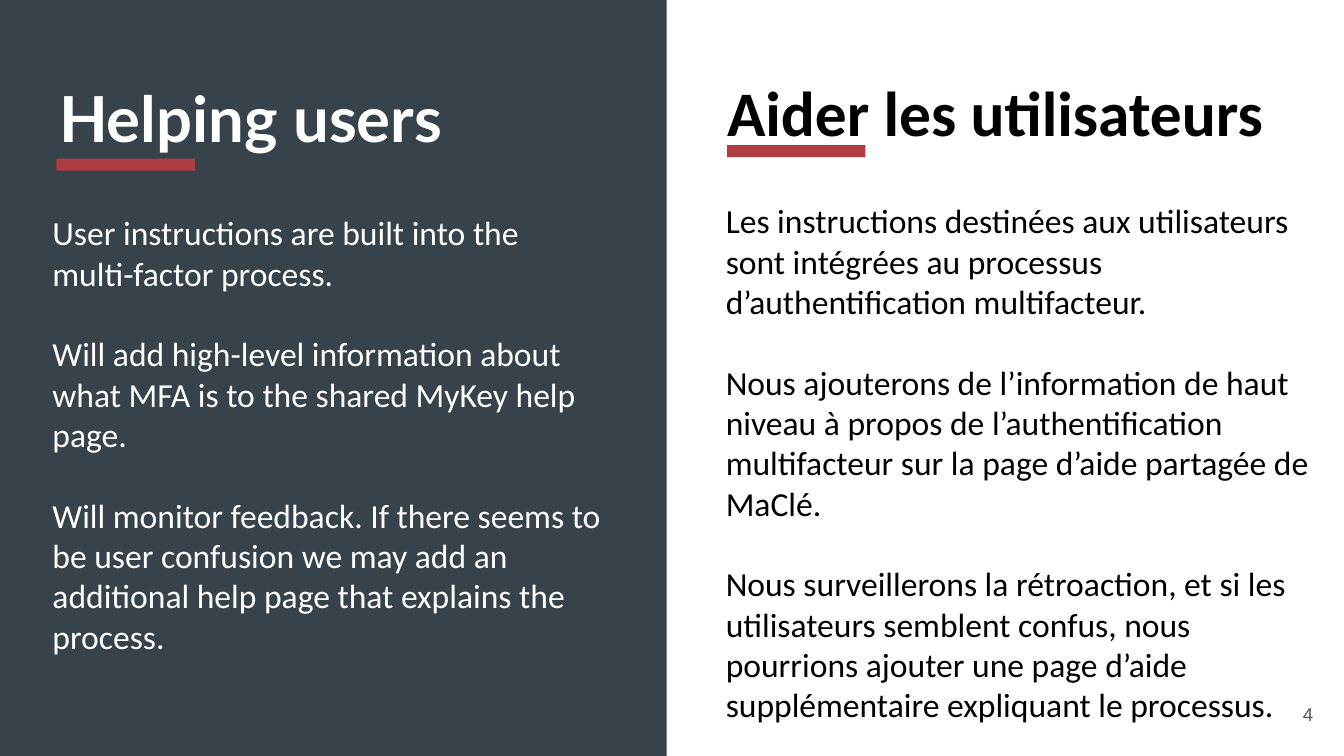
from pptx import Presentation
from pptx import util as u
from pptx.dml import color
from pptx.enum import shapes, text
from pptx.oxml import ns
from lxml import etree


def rgb(value):
    return color.RGBColor.from_string(value)


def place(shape, box):
    shape.left, shape.top, shape.width, shape.height = map(u.Inches, box)


def add_rectangle(slide, box, fill):
    shape = slide.shapes.add_shape(shapes.MSO_SHAPE.RECTANGLE, *map(u.Inches, box))
    shape.shadow.inherit = False
    shape.fill.solid()
    shape.fill.fore_color.rgb = rgb(fill)
    shape.line.fill.background()
    return shape


def remove_bullet(paragraph):
    properties = paragraph._p.get_or_add_pPr()
    properties.set("marL", "0")
    properties.set("indent", "0")
    etree.SubElement(properties, ns.qn("a:buNone"))


def write(shape, groups, size, font, ink, bold=False, gap=0,
          align=text.PP_ALIGN.LEFT, anchor=text.MSO_ANCHOR.TOP):
    frame = shape.text_frame
    frame.word_wrap = True
    frame.auto_size = text.MSO_AUTO_SIZE.NONE
    frame.vertical_anchor = anchor
    frame.margin_left = frame.margin_right = u.Inches(0.1)
    frame.margin_top = frame.margin_bottom = u.Inches(0.1)
    lines = [(line, gap if group_index and not line_index else 0)
             for group_index, group in enumerate(groups)
             for line_index, line in enumerate(group)]
    for index, (line, space) in enumerate(lines):
        paragraph = frame.add_paragraph() if index else frame.paragraphs[0]
        paragraph.text = line
        paragraph.alignment = align
        paragraph.line_spacing = 1.0
        paragraph.space_before = u.Pt(space)
        paragraph.space_after = u.Pt(0)
        remove_bullet(paragraph)
        for run in paragraph.runs:
            run.font.size = u.Pt(size)
            run.font.name = font
            run.font.bold = bold
            run.font.color.rgb = rgb(ink)


def add_language_column(slide, box, title, title_width, heading, heading_font, body, groups,
                        ink, bar_offset, body_offset):
    left, top, width, height = box
    place(title, (left, top, title_width, 1.57))
    write(title, [[heading]], 34, heading_font, ink, bold=True)
    bar_left, bar_top = bar_offset
    add_rectangle(slide, (left + bar_left, top + bar_top, 1.03, 0.09), "AF3C43")
    body_left, body_top = body_offset
    place(body, (left + body_left, top + body_top, width, height - body_top))
    write(body, groups, 18, "Calibri", ink, gap=21.6)


def add_page_number(slide, box, number):
    shape = slide.shapes.add_textbox(*map(u.Inches, box))
    write(shape, [[number]], 10, "Arial", "595959",
          align=text.PP_ALIGN.RIGHT, anchor=text.MSO_ANCHOR.MIDDLE)


def main():
    presentation = Presentation()
    presentation.slide_width = u.Inches(10)
    presentation.slide_height = presentation.slide_width * 9 // 16
    slide = presentation.slides.add_slide(presentation.slide_layouts.get_by_name("Comparison"))
    holders = {holder.placeholder_format.idx: holder for holder in slide.placeholders}

    panel = add_rectangle(slide, (-0.05, -0.01, 5.01, 5.64), "37424A")
    panel.element.getparent().insert(2, panel.element)

    add_language_column(
        slide, (0.34, 0.49, 4.55, 4.52), holders[0], 3.36, "Helping users", "Lato", holders[2],
        [["User instructions are built into the", "multi-factor process."],
         ["Will add high-level information about what MFA is to the shared MyKey help page."],
         ["Will monitor feedback. If there seems to be user confusion we may add an "
          "additional help page that explains the process."]],
        "FFFFFF", (0.08, 0.69), (-0.05, 0.99))
    add_language_column(
        slide, (5.31, 0.44, 4.55, 5.09), holders[1], 4.55, "Aider les utilisateurs", "Calibri",
        holders[4],
        [["Les instructions destinées aux utilisateurs sont intégrées au processus "
          "d’authentification multifacteur."],
         ["Nous ajouterons de l’information de haut niveau à propos de l’authentification "
          "multifacteur sur la page d’aide partagée de MaClé."],
         ["Nous surveillerons la rétroaction, et si les utilisateurs semblent confus, nous "
          "pourrions ajouter une page d’aide supplémentaire expliquant le processus."]],
        "000000", (0.1, 0.64), (-0.01, 0.95))
    add_page_number(slide, (9.27, 5.1, 0.6, 0.43), "4")

    unused = holders[3].element
    unused.getparent().remove(unused)
    presentation.save("out.pptx")


if __name__ == "__main__":
    main()
